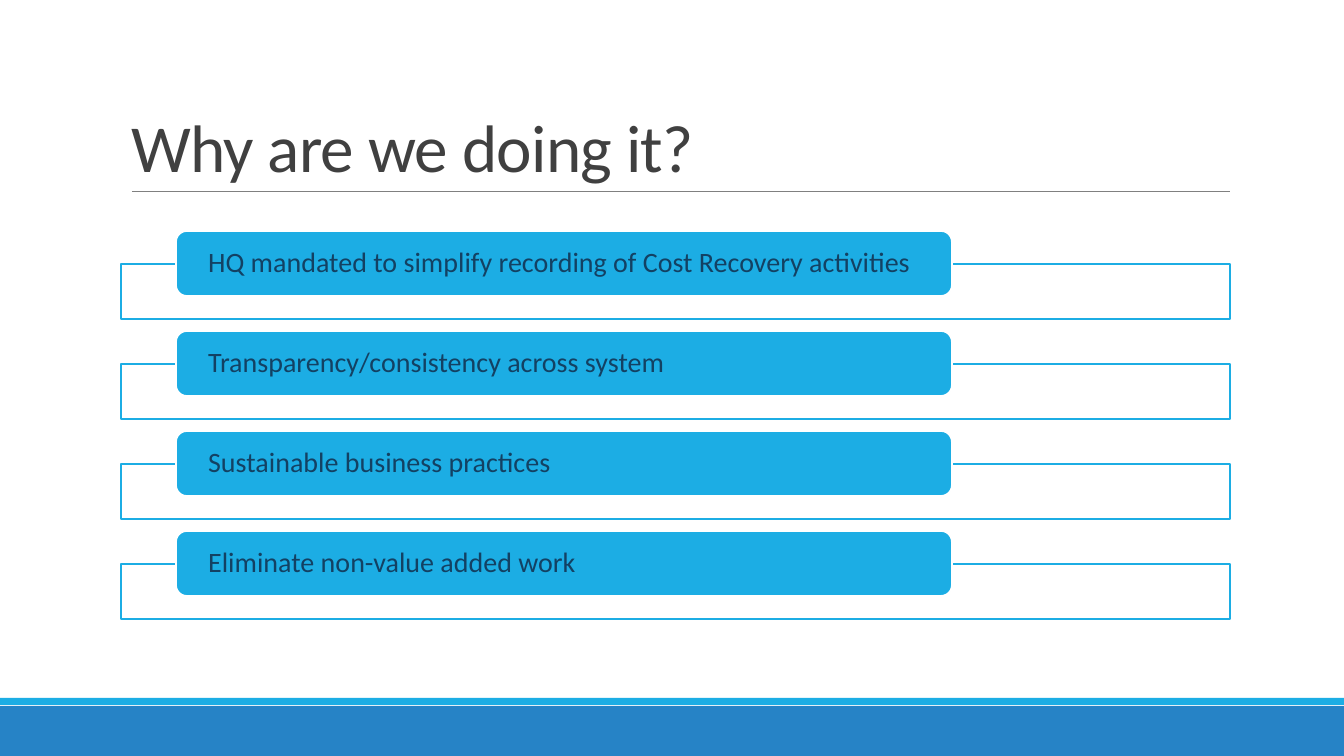
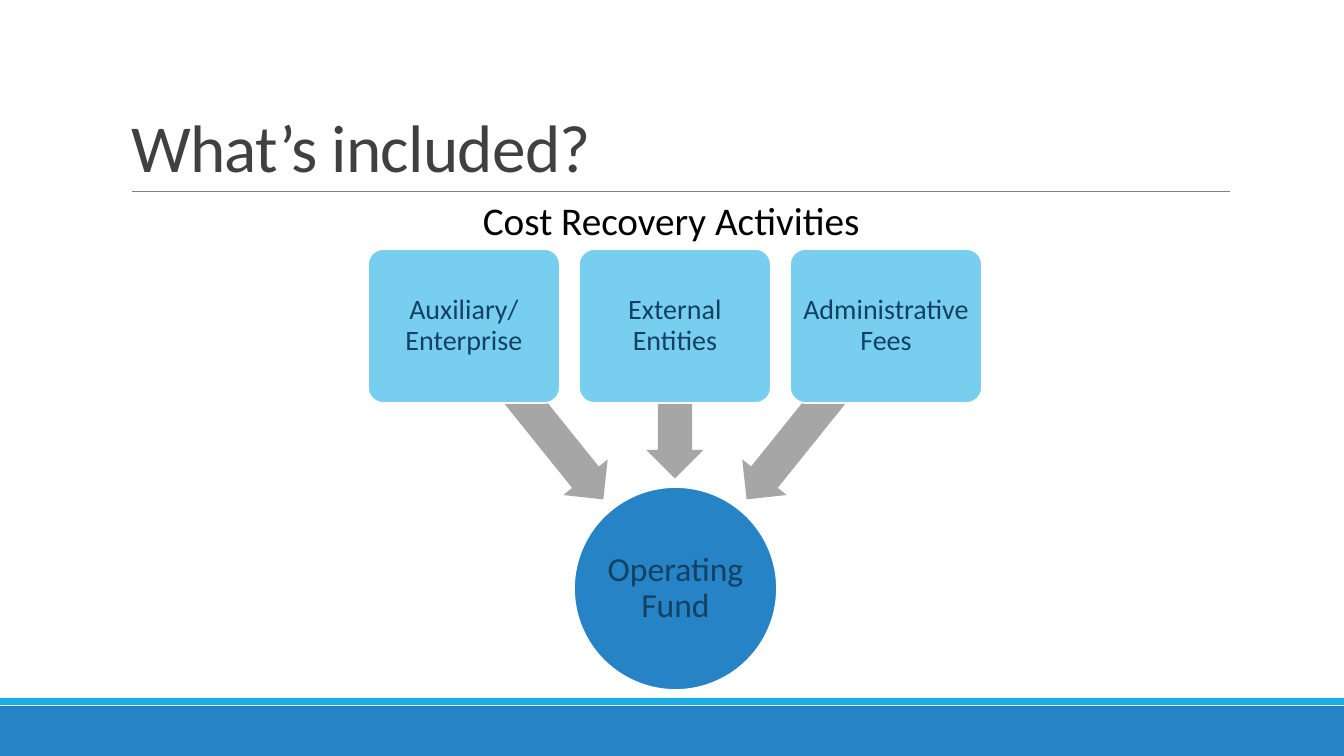
import pptx
import pptx.dml.color
import pptx.enum.shapes
import pptx.enum.text
import pptx.oxml.ns
import pptx.util
from lxml import etree

SHAPE = pptx.enum.shapes.MSO_SHAPE
ALIGN = pptx.enum.text.PP_ALIGN
ANCHOR = pptx.enum.text.MSO_ANCHOR


def px(length):
    """Turn whole pixels (1344 across the slide) into EMU."""
    return pptx.util.Emu(round(length * 914400 / 100.8))


def color(code):
    return pptx.dml.color.RGBColor.from_string(code)


class Deck:
    """Shared style and the slide being built."""
    WIDTH, HEIGHT = 1344, 756
    FONT = "Calibri"
    BLUE, CYAN, SKY = "2683C6", "1CADE4", "77CEEF"
    NAVY, WHITE, BLACK = "134163", "FFFFFF", "000000"
    TITLE, RULE, ARROW = "404040", "808080", "A6A6A6"

    def __init__(self):
        self.presentation = pptx.Presentation()
        self.presentation.slide_width = px(self.WIDTH)
        self.presentation.slide_height = px(self.HEIGHT)
        self.slide = None

    def add_slide(self, title):
        layout = self.presentation.slide_layouts.get_by_name("Title Only")
        self.slide = self.presentation.slides.add_slide(layout)
        # Footer bands and the rule under the title
        self.shape(SHAPE.RECTANGLE, 0, 706, self.WIDTH, 50, self.BLUE)
        self.shape(SHAPE.RECTANGLE, 0, 698, self.WIDTH, 7, self.CYAN)
        self.line(132, 191, 1230, 191, self.RULE, 0.5)
        # Title
        placeholder = self.slide.shapes.title
        placeholder.left, placeholder.top = px(121), px(31)
        placeholder.width, placeholder.height = px(1109), px(160)
        self.text(placeholder, title, 48, self.TITLE, ALIGN.LEFT,
                  ANCHOR.BOTTOM, line_spacing=0.85)
        for run in placeholder.text_frame.paragraphs[0].runs:
            run.font._element.set("spc", "-50")

    def text(self, shape, text, size, font_color, align=ALIGN.CENTER,
             anchor=ANCHOR.MIDDLE, margins=None, line_spacing=0.9):
        frame = shape.text_frame
        frame.text = text
        frame.word_wrap = True
        frame.auto_size = pptx.enum.text.MSO_AUTO_SIZE.NONE
        frame.vertical_anchor = anchor
        if margins:
            frame.margin_left = frame.margin_right = px(margins[0])
            frame.margin_top = frame.margin_bottom = px(margins[1])
        for paragraph in frame.paragraphs:
            paragraph.alignment = align
            paragraph.line_spacing = line_spacing
            for run in paragraph.runs:
                run.font.name = self.FONT
                run.font.size = pptx.util.Pt(size)
                run.font.color.rgb = color(font_color)

    def shape(self, kind, left, top, width, height, fill, line=None,
              adjustments=(), rotation=0):
        shape = self.slide.shapes.add_shape(
            kind, px(left), px(top), px(width), px(height))
        shape.shadow.inherit = False
        shape.fill.solid()
        shape.fill.fore_color.rgb = color(fill)
        if line:
            shape.line.color.rgb = color(line)
            shape.line.width = pptx.util.Pt(1.25)
        else:
            shape.line.fill.background()
        for index, value in enumerate(adjustments):
            shape.adjustments[index] = value
        shape.rotation = rotation
        return shape

    def line(self, x1, y1, x2, y2, line_color, width):
        connector = self.slide.shapes.add_connector(
            pptx.enum.shapes.MSO_CONNECTOR.STRAIGHT,
            px(x1), px(y1), px(x2), px(y2))
        connector.line.color.rgb = color(line_color)
        connector.line.width = pptx.util.Pt(width)
        etree.SubElement(connector._element.spPr,
                         pptx.oxml.ns.qn("a:effectLst"))

    def label(self, text, left, top, width, height, size, font_color):
        box = self.slide.shapes.add_textbox(
            px(left), px(top), px(width), px(height))
        self.text(box, text, size, font_color, ALIGN.LEFT, ANCHOR.TOP,
                  line_spacing=1.0)


def add_reasons(deck):
    deck.add_slide("Why are we doing it?")
    reasons = [
        "HQ mandated to simplify recording of Cost Recovery activities",
        "Transparency/consistency across system",
        "Sustainable business practices",
        "Eliminate non-value added work",
    ]
    for row, reason in enumerate(reasons):
        top = 231 + 100 * row
        deck.shape(SHAPE.RECTANGLE, 121, top + 33, 1109, 55,
                   deck.WHITE, deck.CYAN)
        pill = deck.shape(SHAPE.ROUNDED_RECTANGLE, 176, top, 776, 65,
                          deck.CYAN, deck.WHITE)
        deck.text(pill, reason, 20, deck.NAVY, ALIGN.LEFT, margins=(29, 0))


def add_included(deck):
    deck.add_slide("What’s included?")

    # Fund that receives the activities
    fund = deck.shape(SHAPE.OVAL, 574, 487, 203, 203, deck.BLUE, deck.WHITE)
    deck.text(fund, "Operating Fund", 24, deck.NAVY, margins=(2, 2))

    # Activities, each with its arrow: left, top, length, rotation
    activities = [
        ("Auxiliary/ Enterprise", (422, 384, 223, 231.2)),
        ("External Entities", (599, 374, 152, 270)),
        ("Administrative Fees", (705, 384, 223, 308.8)),
    ]
    for column, (name, arrow) in enumerate(activities):
        left, top, length, rotation = arrow
        deck.shape(SHAPE.LEFT_ARROW, left, top, length, 57, deck.ARROW,
                   adjustments=(0.6, 0.5), rotation=rotation)
        card = deck.shape(SHAPE.ROUNDED_RECTANGLE, 368 + 211 * column, 249,
                          192, 154, deck.SKY, deck.WHITE, adjustments=(0.1,))
        deck.text(card, name, 20, deck.NAVY, margins=(4, 4))

    deck.label("Cost Recovery Activities", 473, 191, 406, 57, 28, deck.BLACK)


def main():
    deck = Deck()
    add_reasons(deck)
    add_included(deck)
    deck.presentation.save("out.pptx")


if __name__ == "__main__":
    main()
